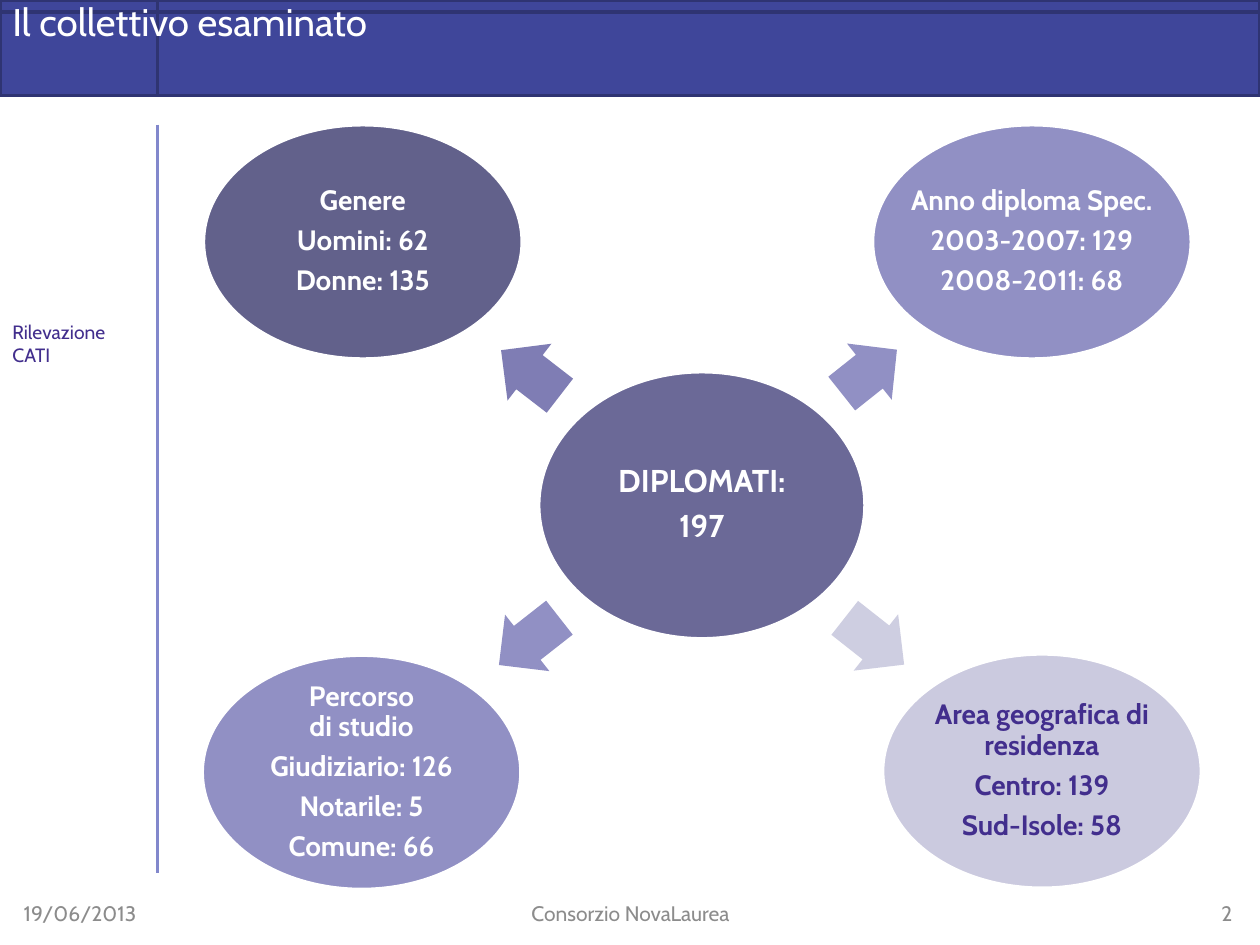
from dataclasses import dataclass

from lxml import etree
from pptx import Presentation
from pptx import util as u
from pptx.dml.color import RGBColor
from pptx.enum import shapes, text
from pptx.oxml.ns import qn

SLIDE_W, SLIDE_H = 10, 7.5
TITLE = "Il collettivo esaminato"
SIDE_NOTE = "Rilevazione CATI"


@dataclass(frozen=True)
class Theme:
    font: str = "Cabin"
    band: str = "3F469A"
    band_line: str = "2F3472"
    rule: str = "8288CC"
    light: str = "FFFFFF"
    accent: str = "422E8D"
    muted: str = "8C8C8C"
    hub: str = "6B6997"
    title_size: int = 22
    hub_size: int = 18
    topic_size: int = 16
    note_size: int = 11
    footer_size: int = 12


THEME = Theme()
ALIGN = text.PP_ALIGN
ANCHOR = text.MSO_ANCHOR

BAND_H = 0.76
RULE_X = SLIDE_W / 8
HUB_SIZE = (2.59, 2.12)
TOPIC_SIZE = (2.53, 1.86)
HUB_CENTRE = (5.57, 4.01)

HUB_LINES = ["DIPLOMATI:", "197"]
# lines, centre, fill, text colour, then arrow: centre, length, rotation, fill
TOPICS = [
    (["Genere", "Uomini: 62", "Donne: 135"],
     (2.88, 1.92), "62618B", THEME.light, (4.21, 2.96), 0.59, 217.7, "7F7DB4"),
    (["Anno diploma Spec.", "2003-2007: 129", "2008-2011: 68"],
     (8.19, 1.92), "9190C4", THEME.light, (6.9, 2.95), 0.56, 321.5, "9190C4"),
    (["Area geografica di\vresidenza", "Centro: 139", "Sud-Isole: 58"],
     (8.27, 6.12), "CBCADF", THEME.accent, (6.94, 5.09), 0.6, 38.2, "CECEE1"),
    (["Percorso\vdi studio", "Giudiziario: 126", "Notarile: 5", "Comune: 66"],
     (2.87, 6.13), "9190C4", THEME.light, (4.2, 5.09), 0.61, 141.9, "9190C4"),
]
ARROW_H = 0.57

FOOTER_TOP, FOOTER_H = 7.05, 0.4
FOOTER = [  # text, left, width, alignment
    ("19/06/2013", 0.09, 2.33, ALIGN.LEFT),
    ("Consorzio NovaLaurea", 3.42, 3.17, ALIGN.CENTER),
    ("2", 7.55, 2.33, ALIGN.RIGHT),
]


def rgb(value):
    return RGBColor.from_string(value)


def write(frame, lines, size, colour, align=ALIGN.LEFT, bold=False):
    frame.text = "\n".join(lines)
    for paragraph in frame.paragraphs:
        paragraph.alignment = align
        for run in paragraph.runs:
            run.font.name = THEME.font
            run.font.size = u.Pt(size)
            run.font.bold = bold
            run.font.color.rgb = rgb(colour)


def add_label(slide, box, wording, size, colour,
              align=ALIGN.LEFT, anchor=ANCHOR.TOP):
    frame = slide.shapes.add_textbox(*map(u.Inches, box)).text_frame
    frame.word_wrap = True
    frame.vertical_anchor = anchor
    write(frame, [wording], size, colour, align)
    return frame


def add_filled(slide, kind, box, fill, line=None):
    shape = slide.shapes.add_shape(kind, *map(u.Inches, box))
    shape.shadow.inherit = False
    shape.fill.solid()
    shape.fill.fore_color.rgb = rgb(fill)
    if line:
        shape.line.color.rgb = rgb(line)
        shape.line.width = u.Pt(2)
    else:
        shape.line.fill.background()
    return shape


def centred(centre, size):
    return (centre[0] - size[0] / 2, centre[1] - size[1] / 2, *size)


def add_bubble(slide, lines, centre, size, fill, type_size, colour):
    bubble = add_filled(slide, shapes.MSO_SHAPE.OVAL, centred(centre, size),
                        fill, THEME.light)
    frame = bubble.text_frame
    frame.word_wrap = False
    frame.vertical_anchor = ANCHOR.MIDDLE
    frame.margin_left = frame.margin_right = u.Inches(0.02)
    frame.margin_top = frame.margin_bottom = u.Inches(0.02)
    write(frame, lines, type_size, colour, ALIGN.CENTER, bold=True)
    for paragraph in frame.paragraphs:
        paragraph.line_spacing = 0.9
        paragraph.space_after = u.Pt(0.35 * type_size)


def add_arrow(slide, centre, length, rotation, fill):
    arrow = add_filled(slide, shapes.MSO_SHAPE.RIGHT_ARROW,
                       centred(centre, (length, ARROW_H)), fill)
    arrow.adjustments[0] = 0.6
    arrow.adjustments[1] = 0.5
    arrow.rotation = rotation


def add_rule(slide, x, top, bottom):
    rule = slide.shapes.add_connector(
        shapes.MSO_CONNECTOR.STRAIGHT, *map(u.Inches, (x, top, x, bottom)))
    rule.line.color.rgb = rgb(THEME.rule)
    rule.line.width = u.Pt(1.5)
    etree.SubElement(rule.line._get_or_add_ln().getparent(), qn("a:effectLst"))


def main():
    deck = Presentation()
    deck.slide_width, deck.slide_height = u.Inches(SLIDE_W), u.Inches(SLIDE_H)
    slide = deck.slides.add_slide(deck.slide_layouts[6])

    add_rule(slide, RULE_X, 0.99, 6.93)
    band = (0, 0, SLIDE_W, BAND_H)
    add_filled(slide, shapes.MSO_SHAPE.FLOWCHART_INTERNAL_STORAGE, band,
               THEME.band, THEME.band_line)
    title = add_label(slide, band, TITLE, THEME.title_size, THEME.light)
    title.paragraphs[0].line_spacing = u.Pt(THEME.title_size)

    add_bubble(slide, HUB_LINES, HUB_CENTRE, HUB_SIZE, THEME.hub,
               THEME.hub_size, THEME.light)
    for lines, centre, fill, colour, *arrow in TOPICS:
        add_arrow(slide, *arrow)
        add_bubble(slide, lines, centre, TOPIC_SIZE, fill,
                   THEME.topic_size, colour)

    add_label(slide, (0, 2.49, 1.22, 0.87), SIDE_NOTE,
              THEME.note_size, THEME.accent)
    for wording, left, width, align in FOOTER:
        add_label(slide, (left, FOOTER_TOP, width, FOOTER_H), wording,
                  THEME.footer_size, THEME.muted, align, ANCHOR.MIDDLE)

    deck.save("out.pptx")


if __name__ == "__main__":
    main()
